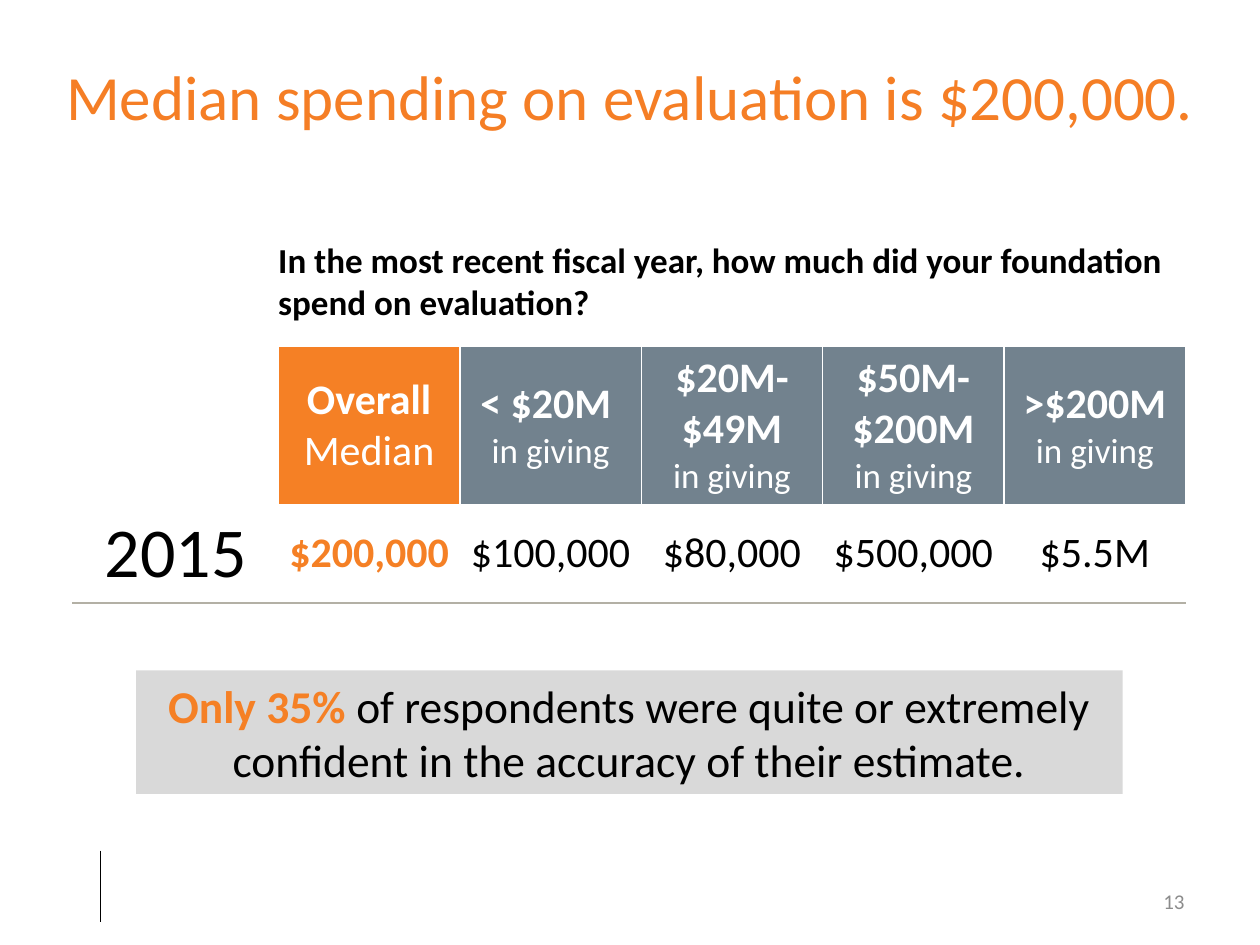
from dataclasses import dataclass

from lxml import etree
from pptx import Presentation
from pptx import util as u
from pptx.dml.color import RGBColor
from pptx.enum import shapes, text
from pptx.oxml import ns

COLUMNS, ROWS = 100, 75  # layout grid over the whole slide
LEFT, CENTER, RIGHT = text.PP_ALIGN.LEFT, text.PP_ALIGN.CENTER, text.PP_ALIGN.RIGHT


@dataclass(frozen=True)
class Theme:
    font: str = "Calibri"
    title: str = "F57E25"
    accent: str = "F58025"
    header: str = "72828E"
    panel: str = "D9D9D9"
    rule: str = "B3B0A5"
    muted: str = "8C8C8C"
    ink: str = "000000"
    paper: str = "FFFFFF"
    year_size: int = 40
    title_size: int = 36
    callout_size: int = 26
    value_size: int = 24
    label_size: int = 20
    number_size: int = 12


@dataclass(frozen=True)
class Span:
    words: str
    size: int
    color: str
    bold: bool = False


class SlideBuilder:
    def __init__(self, deck, theme):
        self.deck = deck
        self.theme = theme
        self.page = deck.slides.add_slide(deck.slide_layouts[5])

    def place(self, left, top, width, height):
        """Turn grid columns and rows into slide lengths."""
        column = self.deck.slide_width / COLUMNS
        row = self.deck.slide_height / ROWS
        return [round(n) for n in (left * column, top * row, width * column, height * row)]

    def add_spans(self, frame, paragraphs, align):
        for index, spans in enumerate(paragraphs):
            para = frame.add_paragraph() if index else frame.paragraphs[0]
            para.alignment = align
            for span in spans:
                run = para.add_run()
                run.text = span.words
                run.font.name = self.theme.font
                run.font.size = u.Pt(span.size)
                run.font.bold = span.bold
                run.font.color.rgb = RGBColor.from_string(span.color)

    def fill_frame(self, frame, spans, align):
        frame.word_wrap = True
        frame.auto_size = text.MSO_AUTO_SIZE.NONE
        frame.vertical_anchor = text.MSO_ANCHOR.MIDDLE
        self.add_spans(frame, [spans], align)

    def title(self, area, *spans):
        box = self.page.shapes.title
        box.left, box.top, box.width, box.height = self.place(*area)
        self.fill_frame(box.text_frame, spans, CENTER)

    def label(self, area, align, *spans):
        box = self.page.shapes.add_textbox(*self.place(*area))
        self.fill_frame(box.text_frame, spans, align)

    def panel(self, area, color, align, *spans):
        box = self.page.shapes.add_shape(shapes.MSO_SHAPE.RECTANGLE, *self.place(*area))
        box.shadow.inherit = False
        box.fill.solid()
        box.fill.fore_color.rgb = RGBColor.from_string(color)
        box.line.fill.background()
        self.fill_frame(box.text_frame, spans, align)

    def line(self, left, top, width, height):
        x, y, dx, dy = self.place(left, top, width, height)
        rule = self.page.shapes.add_connector(
            shapes.MSO_CONNECTOR.STRAIGHT, x, y, x + dx, y + dy)
        rule.line.color.rgb = RGBColor.from_string(self.theme.ink)
        rule.line.width = u.Pt(0.5)
        etree.SubElement(rule._element.spPr, ns.qn("a:effectLst"))

    def borders(self, cell, bottom):
        properties = cell._tc.get_or_add_tcPr()
        for side in "LRTB":
            edge = etree.SubElement(properties, ns.qn(f"a:ln{side}"), w=str(u.Pt(1)))
            fill = etree.SubElement(edge, ns.qn("a:solidFill"))
            color = bottom if side == "B" else self.theme.paper
            etree.SubElement(fill, ns.qn("a:srgbClr"), val=color)

    def table(self, left, top, widths, heights, rows):
        """Each cell in rows is (fill or None, bottom border, paragraphs)."""
        area = self.place(left, top, sum(widths), sum(heights))
        grid = self.page.shapes.add_table(len(rows), len(widths), *area).table
        grid.first_row = grid.horz_banding = False
        for column, width in zip(grid.columns, widths):
            column.width = self.place(0, 0, width, 0)[2]
        for row, height, cells in zip(grid.rows, heights, rows):
            row.height = self.place(0, 0, 0, height)[3]
            for cell, (fill, bottom, paragraphs) in zip(row.cells, cells):
                cell.vertical_anchor = text.MSO_ANCHOR.MIDDLE
                cell.margin_left = cell.margin_right = u.Inches(0.05)
                cell.margin_top = cell.margin_bottom = u.Inches(0.05)
                self.borders(cell, bottom)
                if fill:
                    cell.fill.solid()
                    cell.fill.fore_color.rgb = RGBColor.from_string(fill)
                else:
                    cell.fill.background()
                self.add_spans(cell.text_frame, paragraphs, CENTER)


def spending_rows(theme):
    sizes = ["< $20M ", "$20M-$49M", "$50M-$200M", ">$200M"]
    values = ["$100,000", "$80,000", "$500,000", "$5.5M"]
    big = theme.value_size

    def heading(fill, *paragraphs):
        return fill, theme.paper, paragraphs

    def value(words, size=big, color=theme.ink, bold=False):
        return None, theme.rule, [[Span(words, size, color, bold)]]

    header = [
        heading(theme.paper),
        heading(theme.accent, [Span("Overall", big, theme.paper, True),
                               Span(" Median", big, theme.paper)]),
    ]
    header += [heading(theme.header, [Span(size, big, theme.paper, True)],
                       [Span("in giving", theme.label_size, theme.paper)])
               for size in sizes]
    year = [value("2015", theme.year_size), value("$200,000", big, theme.accent, True)]
    return [header, year + [value(words) for words in values]]


def main():
    deck = Presentation()
    deck.slide_width, deck.slide_height = u.Inches(10), u.Inches(7.5)
    theme = Theme()
    slide = SlideBuilder(deck, theme)

    slide.line(8, 67.5, 0, 5.7)
    slide.title((0, 1.8, 100, 11.5),
                Span("Median spending on evaluation is $200,000.",
                     theme.title_size, theme.title))
    slide.label((71.7, 69.5, 23.3, 4), RIGHT, Span("13", theme.number_size, theme.muted))
    slide.panel((10.8, 53.2, 78.3, 9.8), theme.panel, CENTER,
                Span("Only 35% ", theme.callout_size, theme.accent, True),
                Span("of respondents were quite or extremely confident in the "
                     "accuracy of their estimate.", theme.callout_size, theme.ink))
    slide.panel((21.1, 18.4, 74.2, 7.7), theme.paper, LEFT,
                Span("In the most recent fiscal year, how much did your foundation "
                     "spend on evaluation?", theme.label_size, theme.ink, True))
    slide.table(5.8, 27.5, [16.3] + [14.4] * 5, [12.3, 7.8], spending_rows(theme))

    deck.save("out.pptx")


if __name__ == "__main__":
    main()
